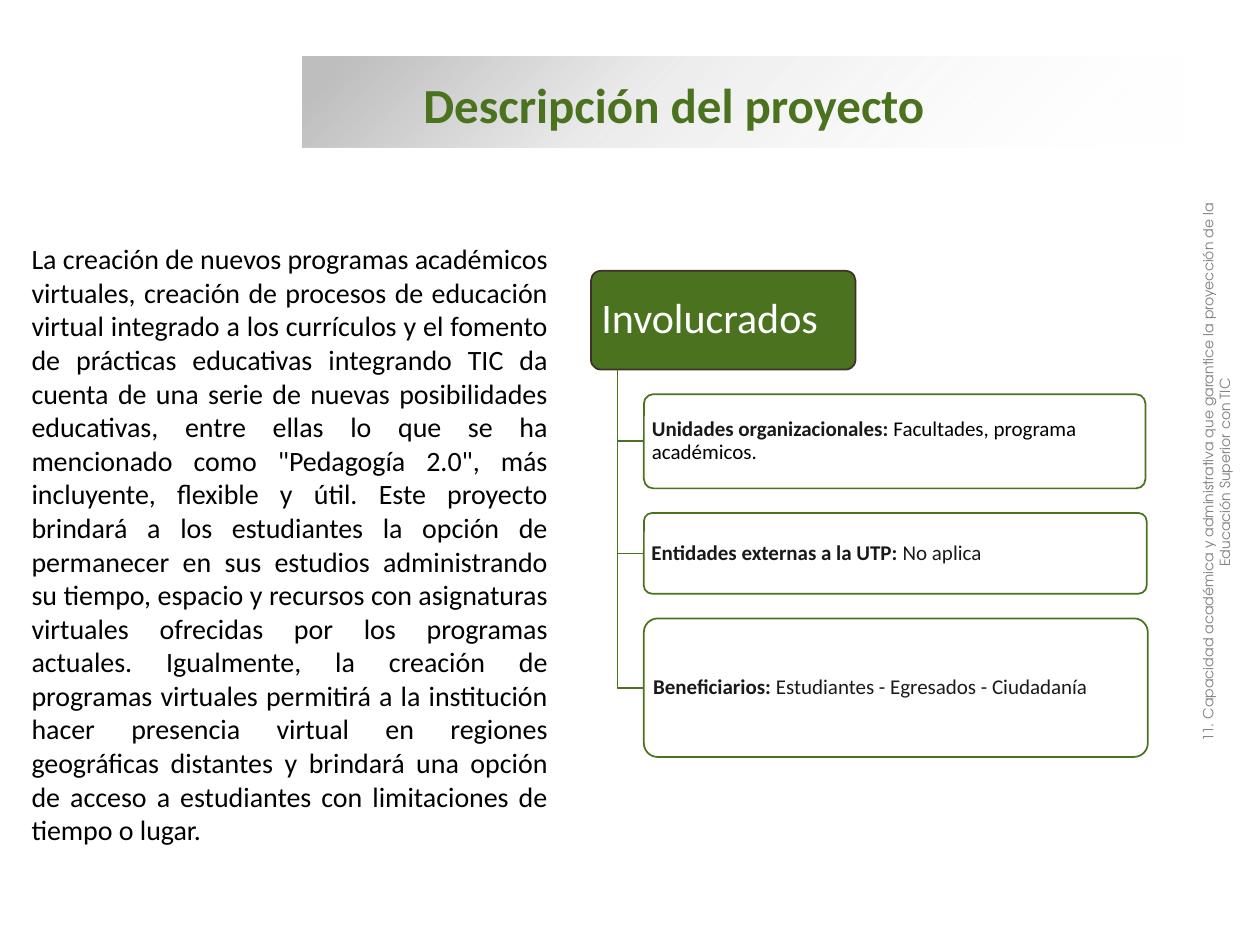
import pptx
import pptx.util
import pptx.dml.color
import pptx.enum.shapes
import pptx.enum.text
import pptx.oxml
import pptx.oxml.ns
from dataclasses import dataclass

Pt = pptx.util.Pt
Align = pptx.enum.text.PP_ALIGN
Anchor = pptx.enum.text.MSO_ANCHOR


@dataclass(frozen=True)
class Theme:
    green: str = "4B731F"
    brown: str = "3F3029"
    white: str = "FFFFFF"
    black: str = "000000"
    ink: str = "191919"
    gray: str = "808080"
    silver: str = "BFBFBF"
    font: str = "Calibri"
    side_font: str = "TeX Gyre Adventor"
    title_size: int = 28
    header_size: int = 24
    body_size: int = 16
    row_size: int = 12
    side_size: int = 8


class SlideBuilder:
    def __init__(self, slide, theme):
        self.slide = slide
        self.theme = theme

    def color(self, value):
        return pptx.dml.color.RGBColor.from_string(value)

    def place(self, shape, left, top, width, height):
        shape.left, shape.top = Pt(left), Pt(top)
        shape.width, shape.height = Pt(width), Pt(height)

    def add_text(self, shape, runs, size, align=Align.LEFT, anchor=Anchor.TOP, font=None):
        frame = shape.text_frame
        frame.word_wrap = True
        frame.auto_size = pptx.enum.text.MSO_AUTO_SIZE.NONE
        frame.vertical_anchor = anchor
        paragraph = frame.paragraphs[0]
        paragraph.alignment = align
        paragraph.space_before = Pt(0)
        for wording, color, bold in runs:
            run = paragraph.add_run()
            run.text = wording
            run.font.name = font or self.theme.font
            run.font.size = Pt(size)
            run.font.bold = bold
            run.font.color.rgb = self.color(color)
        return paragraph

    def title(self, wording, box):
        title = self.slide.shapes.title
        self.place(title, *box)
        self.add_text(title, [(wording, self.theme.green, True)],
                      self.theme.title_size, anchor=Anchor.MIDDLE)

    def body(self, wording, box):
        body = self.slide.placeholders[1]
        self.place(body, *box)
        paragraph = self.add_text(body, [(wording, self.theme.black, False)],
                                  self.theme.body_size, Align.JUSTIFY)
        properties = paragraph._p.get_or_add_pPr()
        properties.set("marL", "0")
        properties.set("indent", "0")
        properties.append(pptx.oxml.parse_xml(
            f'<a:buNone {pptx.oxml.ns.nsdecls("a")}/>'))

    def band(self, box, stops, angle):
        band = self.slide.shapes.add_shape(
            pptx.enum.shapes.MSO_SHAPE.RECTANGLE, *map(Pt, box))
        band.shadow.inherit = False
        band.line.fill.background()
        band.fill.background()
        marks = "".join(
            f'<a:gs pos="{position * 1000}"><a:srgbClr val="{color}">'
            f'<a:alpha val="{opacity * 1000}"/></a:srgbClr></a:gs>'
            for position, color, opacity in stops)
        gradient = pptx.oxml.parse_xml(
            f'<a:gradFill {pptx.oxml.ns.nsdecls("a")}><a:gsLst>{marks}</a:gsLst>'
            f'<a:lin ang="{angle * 60000}" scaled="0"/></a:gradFill>')
        properties = band.element.spPr
        properties.replace(properties.find(pptx.oxml.ns.qn("a:noFill")), gradient)
        self.slide.shapes.title.element.addprevious(band.element)

    def card(self, box, fill, line, runs, size, inset, align=Align.LEFT):
        card = self.slide.shapes.add_shape(
            pptx.enum.shapes.MSO_SHAPE.ROUNDED_RECTANGLE, *map(Pt, box))
        card.adjustments[0] = 0.1
        card.shadow.inherit = False
        card.fill.solid()
        card.fill.fore_color.rgb = self.color(fill)
        card.line.color.rgb = self.color(line)
        card.line.width = Pt(1)
        frame = card.text_frame
        frame.margin_left = frame.margin_right = Pt(inset)
        frame.margin_top = frame.margin_bottom = Pt(inset / 2)
        paragraph = self.add_text(card, runs, size, align, Anchor.MIDDLE)
        paragraph.line_spacing = 0.9

    def branch(self, start_x, start_y, end_x, end_y):
        builder = self.slide.shapes.build_freeform(Pt(start_x), Pt(start_y))
        builder.add_line_segments(
            [(Pt(start_x), Pt(end_y)), (Pt(end_x), Pt(end_y))], close=False)
        branch = builder.convert_to_shape()
        branch.shadow.inherit = False
        branch.fill.background()
        branch.line.color.rgb = self.color(self.theme.green)
        branch.line.width = Pt(1)

    def side_note(self, wording, box):
        note = self.slide.shapes.add_textbox(*map(Pt, box))
        note.rotation = 270
        self.add_text(note, [(wording, self.theme.gray, False)], self.theme.side_size,
                      Align.CENTER, font=self.theme.side_font)


def main():
    theme = Theme()
    deck = pptx.Presentation()
    deck.slide_width, deck.slide_height = Pt(720), Pt(540)
    page = SlideBuilder(deck.slides.add_slide(deck.slide_layouts[1]), theme)

    page.body(
        "La creación de nuevos programas académicos virtuales, creación de procesos "
        "de educación virtual integrado a los currículos y el fomento de prácticas "
        "educativas integrando TIC da cuenta de una serie de nuevas posibilidades "
        "educativas, entre ellas lo que se ha mencionado como \"Pedagogía 2.0\", más "
        "incluyente, flexible y útil. Este proyecto brindará a los estudiantes la "
        "opción de permanecer en sus estudios administrando su tiempo, espacio y "
        "recursos con asignaturas virtuales ofrecidas por los programas actuales. "
        "Igualmente, la creación de programas virtuales permitirá a la institución "
        "hacer presencia virtual en regiones geográficas distantes y brindará una "
        "opción de acceso a estudiantes con limitaciones de tiempo o lugar.",
        (10.8, 134.6, 309.6, 356.4))

    header_left, header_top, header_width, header_height = 337.7, 154.8, 151.2, 56.4
    header_bottom = header_top + header_height
    trunk_x = header_left + header_width / 10
    row_left = header_left + header_width / 5
    gap = 14.1
    page.card((header_left, header_top, header_width, header_height),
              theme.green, theme.brown, [("Involucrados", theme.white, False)],
              theme.header_size, 4.3)

    stakeholders = [
        ("Unidades organizacionales: ", "Facultades, programa académicos.",
         theme.black, 286.6, 53.8, Align.LEFT),
        ("Entidades externas a la UTP: ", "No aplica",
         theme.ink, 287.3, 46.1, Align.LEFT),
        ("Beneficiarios: ", "Estudiantes - Egresados - Ciudadanía",
         theme.ink, 288, 79.2, Align.JUSTIFY),
    ]
    row_top = header_bottom + gap
    for label, detail, detail_color, width, height, align in stakeholders:
        page.branch(trunk_x, header_bottom, row_left, row_top + height / 2)
        page.card((row_left, row_top, width, height), theme.white, theme.green,
                  [(label, theme.ink, True), (detail, detail_color, False)],
                  theme.row_size, 3, align)
        row_top += height + gap

    page.band((172.8, 32.4, 502.6, 51.8),
              [(5, theme.silver, 100), (37, theme.silver, 31), (100, theme.white, 0)], 45)
    page.title("Descripción del proyecto", (234.7, 38.9, 446.4, 41))
    page.side_note(
        "11. Capacidad académica y administrativa que garantice la proyección de la "
        "Educación Superior con TIC", (525.6, 252, 348.5, 36))

    deck.save("out.pptx")


if __name__ == "__main__":
    main()
